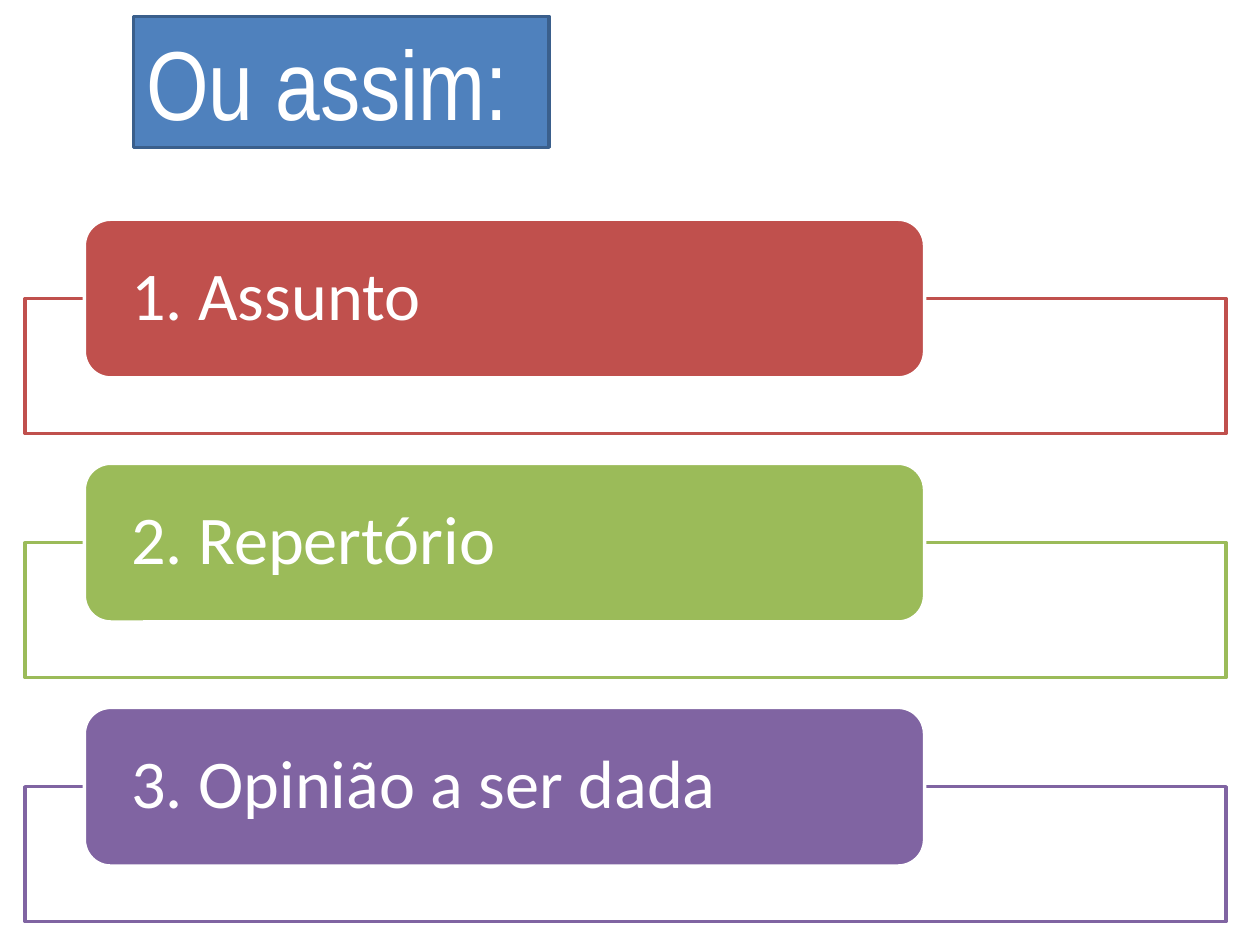
"""Builds a slide with a title and three numbered steps in coloured frames."""
from lxml import etree
from pptx import Presentation
from pptx.dml.color import RGBColor
from pptx.enum.shapes import MSO_SHAPE
from pptx.enum.text import MSO_ANCHOR, MSO_AUTO_SIZE, PP_ALIGN
from pptx.oxml.ns import qn
from pptx.util import Cm, Pt

RECT, ROUNDED = MSO_SHAPE.RECTANGLE, MSO_SHAPE.ROUNDED_RECTANGLE
TOP, MIDDLE = MSO_ANCHOR.TOP, MSO_ANCHOR.MIDDLE
LEFT = PP_ALIGN.LEFT
NO_AUTOFIT = MSO_AUTO_SIZE.NONE

COLORS = {
    "white": "FFFFFF",
    "blue": "4F81BD",
    "dark blue": "3A5F8C",
    "red": "C0504D",
    "green": "9BBB59",
    "purple": "8064A2",
}
TITLE = "Ou assim:"
STEPS = [
    ("1. Assunto", "red"),
    ("2. Repertório", "green"),
    ("3. Opinião a ser dada", "purple"),
]
FRAME_TOP, PITCH = 6.02, 4.92
FRAME_LEFT, FRAME_WIDTH, FRAME_HEIGHT = 0.51, 24.21, 2.72
LABEL_LEFT, LABEL_WIDTH, LABEL_HEIGHT = 1.7, 16.94, 3.2


def rgb(name):
    return RGBColor.from_string(COLORS[name])


def paint(sp, fill, line):
    sp.fill.solid()
    sp.fill.fore_color.rgb = rgb(fill)
    sp.line.color.rgb = rgb(line)
    sp.line.width = Pt(2)


def add_box(shapes, kind, box, fill, line):
    sp = shapes.add_shape(kind, *map(Cm, box))
    sp.shadow.inherit = False
    paint(sp, fill, line)
    return sp


def write(sp, text, font, size, anchor):
    tf = sp.text_frame
    tf.text = text
    tf.word_wrap = True
    tf.auto_size = NO_AUTOFIT
    tf.vertical_anchor = anchor
    p = tf.paragraphs[0]
    p.alignment = LEFT
    r = p.runs[0]
    r.font.name = font
    r.font.size = Pt(size)
    r.font.color.rgb = rgb("white")
    return tf


def add_step(shapes, index, text, color):
    top = FRAME_TOP + index * PITCH
    frame = add_box(shapes, RECT, (FRAME_LEFT, top, FRAME_WIDTH, FRAME_HEIGHT), "white", color)
    fill_color = frame.fill._xPr.find(qn("a:solidFill"))[0]
    etree.SubElement(fill_color, qn("a:alpha"), val="90000")
    label_top = top - LABEL_HEIGHT / 2
    label = add_box(shapes, ROUNDED, (LABEL_LEFT, label_top, LABEL_WIDTH, LABEL_HEIGHT), color, "white")
    tf = write(label, text, "Calibri", 39, MIDDLE)
    tf.margin_left = tf.margin_right = Cm(0.79)
    tf.margin_top = tf.margin_bottom = 0
    tf.paragraphs[0].line_spacing = 0.9


def main():
    prs = Presentation()
    prs.slide_width, prs.slide_height = Cm(25.4), Cm(19.05)
    s = prs.slides.add_slide(prs.slide_layouts[5])
    title = s.shapes.title
    title.left, title.top, title.width, title.height = map(Cm, (2.69, 0.33, 8.38, 2.64))
    paint(title, "blue", "dark blue")
    write(title, TITLE, "Arial Narrow", 56, TOP)
    for i, (text, color) in enumerate(STEPS):
        add_step(s.shapes, i, text, color)
    prs.save("out.pptx")


if __name__ == "__main__":
    main()
